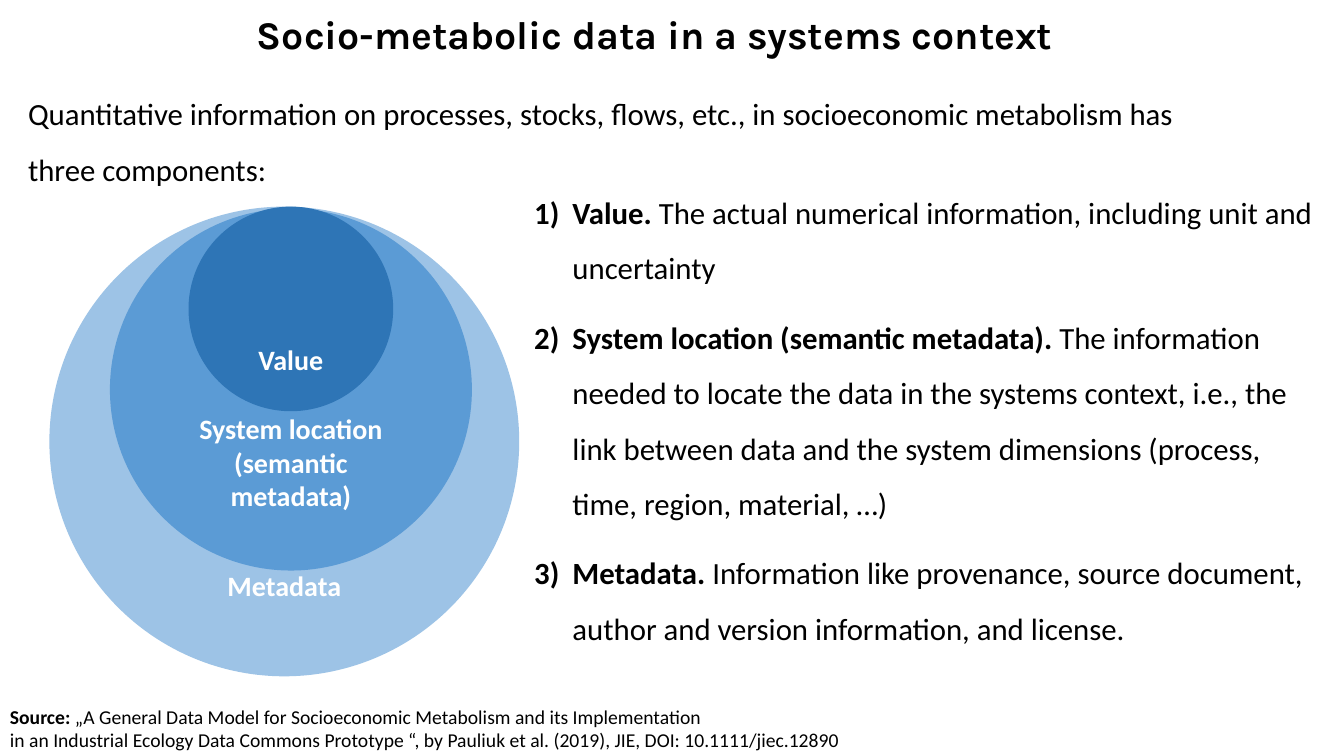
from dataclasses import dataclass, field

from lxml.etree import SubElement
from pptx import Presentation
from pptx.dml.color import RGBColor
from pptx.enum.shapes import MSO_SHAPE
from pptx.enum.text import MSO_ANCHOR, MSO_AUTO_SIZE, PP_ALIGN
from pptx.oxml.ns import qn
from pptx.util import Inches, Pt

Run = tuple[str, bool]


@dataclass
class Note:
    """A text box: place in inches, paragraphs of (text, bold) runs."""
    at: tuple[float, float, float, float]
    paras: list[list[Run]]
    size: int
    wrap: bool = False
    face: str = "Calibri"
    color: str = "000000"
    form: dict = field(default_factory=dict)
    listed: bool = False


@dataclass
class Ring:
    """A nested circle with its label lines at the bottom."""
    left: float
    top: float
    width: float
    fill: str
    lines: list[str]


NOTES = [
    Note((2.45, 0.05, 8.53, 0.57), [[("Socio-metabolic data in a systems context", True)]],
         28, face="Karla", color="010101"),
    Note((0, 6.94, 8.6, 0.57), [
        [("Source:", True),
         (" „A General Data Model for Socioeconomic Metabolism and its Implementation", False)],
        [("in an Industrial Ecology Data Commons Prototype “, by Pauliuk et al. (2019), "
          "JIE, DOI: 10.1111/jiec.12890", False)],
    ], 14),
    Note((0.18, 0.71, 12.18, 1.15), [
        [("Quantitative information on processes, stocks, flows, etc., in socioeconomic "
          "metabolism has three components:", False)],
    ], 22, wrap=True, form={"line_spacing": 1.5, "space_after": Pt(18)}),
    Note((5.2, 1.69, 8.03, 4.77), [
        [("Value.", True),
         (" The actual numerical information, including unit and uncertainty", False)],
        [("System location (semantic metadata). ", True),
         ("The information needed to locate the data in the systems context, i.e., the link "
          "between data and the system dimensions (process, time, region, material, …)", False)],
        [("Metadata.", True),
         (" Information like provenance, source document, author and version information, "
          "and license.", False)],
    ], 22, wrap=True, form={"line_spacing": 1.5, "space_after": Pt(10)}, listed=True),
]

RINGS = [
    Ring(0.49, 2.05, 4.66, "9DC3E6", ["Metadata"]),
    Ring(1.09, 2.07, 3.59, "5B9BD5", ["System location", "(semantic metadata)"]),
    Ring(1.87, 2.05, 2.03, "2E75B6", ["Value"]),
]


def paint(target, color: str) -> None:
    target.rgb = RGBColor.from_string(color)


def apply(target, form: dict) -> None:
    for name, value in form.items():
        setattr(target, name, value)


def number(para) -> None:
    """Make the paragraph an item of a 1) 2) 3) list with a hanging indent."""
    props = para._p.get_or_add_pPr()
    hang = Inches(0.38)
    props.set("marL", str(hang))
    props.set("indent", str(-hang))
    SubElement(props, qn("a:buFont")).set("typeface", "+mj-lt")
    SubElement(props, qn("a:buAutoNum")).set("type", "arabicParenR")


def write(frame, paras: list[list[Run]], size: int, face: str, color: str,
          form: dict, listed: bool = False) -> None:
    for index, runs in enumerate(paras):
        para = frame.add_paragraph() if index else frame.paragraphs[0]
        if listed:
            number(para)
        apply(para, form)
        for text, bold in runs:
            run = para.add_run()
            run.text = text
            apply(run.font, {"size": Pt(size), "name": face, "bold": bold})
            paint(run.font.color, color)


def add_note(slide, note: Note) -> None:
    frame = slide.shapes.add_textbox(*map(Inches, note.at)).text_frame
    apply(frame, {"word_wrap": note.wrap, "auto_size": MSO_AUTO_SIZE.SHAPE_TO_FIT_TEXT})
    write(frame, note.paras, note.size, note.face, note.color, note.form, note.listed)


def add_ring(slide, ring: Ring) -> None:
    box = map(Inches, (ring.left, ring.top, ring.width, ring.width))
    shape = slide.shapes.add_shape(MSO_SHAPE.OVAL, *box)
    shape.shadow.inherit = False
    shape.fill.solid()
    paint(shape.fill.fore_color, ring.fill)
    shape.line.fill.background()
    frame = shape.text_frame
    apply(frame, {"word_wrap": True, "vertical_anchor": MSO_ANCHOR.BOTTOM})
    write(frame, [[(line, True)] for line in ring.lines], 20, "Calibri", "FFFFFF",
          {"alignment": PP_ALIGN.CENTER})


def main() -> None:
    deck = Presentation()
    apply(deck, {"slide_width": Inches(13.33), "slide_height": Inches(7.5)})
    slide = deck.slides.add_slide(deck.slide_layouts[6])
    for note in NOTES:
        add_note(slide, note)
    for ring in RINGS:
        add_ring(slide, ring)
    deck.save("out.pptx")


if __name__ == "__main__":
    main()
